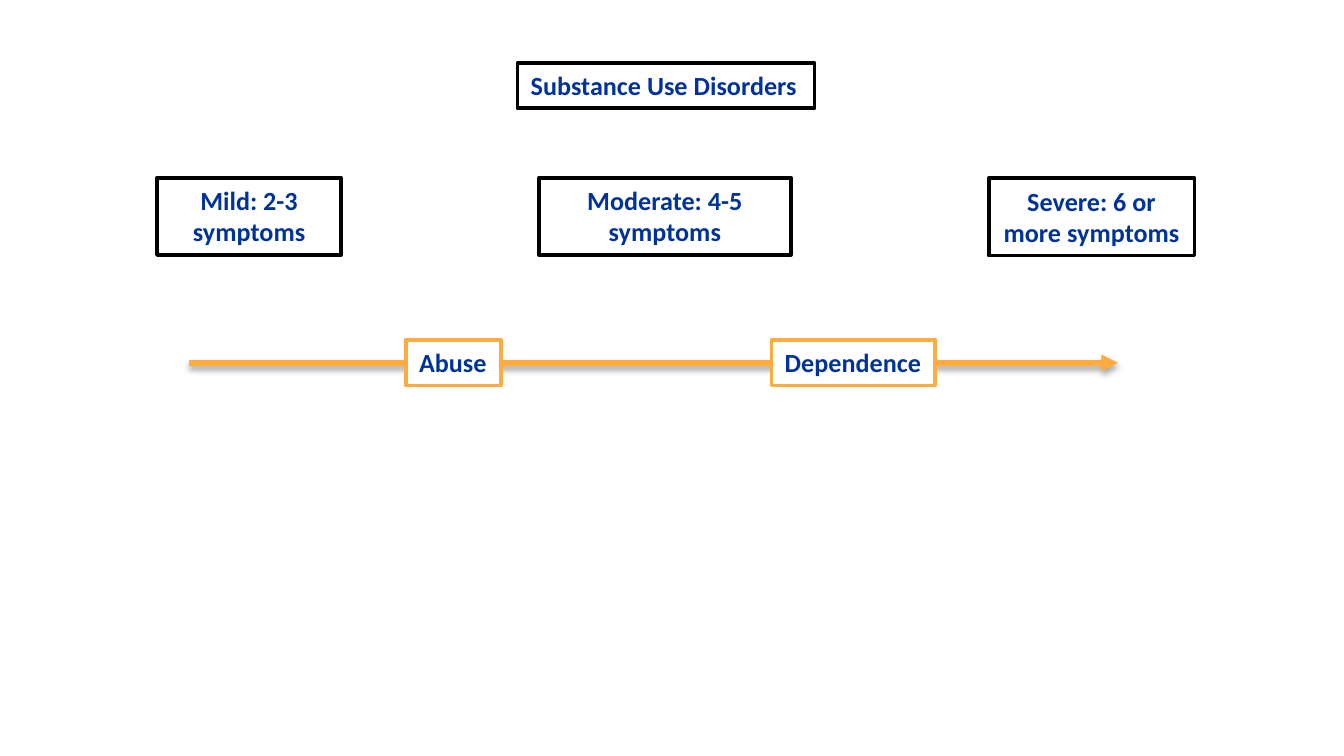
from lxml import etree
from pptx import Presentation
from pptx.dml.color import RGBColor
from pptx.enum.shapes import MSO_CONNECTOR, MSO_SHAPE
from pptx.enum.text import MSO_ANCHOR, PP_ALIGN
from pptx.oxml import parse_xml
from pptx.oxml.ns import nsdecls, qn
from pptx.util import Pt

COLORS = {"text": "003399", "box": "FFFFFF", "border": "000000", "accent": "FFAB40"}
LEFT, CENTER = PP_ALIGN.LEFT, PP_ALIGN.CENTER
LINE_HEIGHT, INSET = 17.1, 3.6

# Content: text, left, top, width, line count, alignment, border colour, wrap
BOXES = [
    ("Mild: 2-3 symptoms", 84.2, 95.2, 98.6, 2, CENTER, "border", True),
    ("Moderate: 4-5 symptoms", 288.7, 95.2, 134.9, 2, CENTER, "border", True),
    ("Severe: 6 or\nmore symptoms", 529.7, 95.5, 110.2, 2, CENTER, "border", False),
    ("Substance Use Disorders", 277.2, 33.8, 159.1, 1, LEFT, "border", False),
    ("Abuse", 217.4, 182.2, 51.1, 1, LEFT, "accent", False),
    ("Dependence", 413.3, 182.2, 87.8, 1, LEFT, "accent", True),
]
ARROW_START, ARROW_END, ARROW_Y = 101.5, 599, 194.4


def color(name):
    return RGBColor.from_string(COLORS[name])


def add_arrow(slide):
    arrow = slide.shapes.add_connector(
        MSO_CONNECTOR.STRAIGHT, Pt(ARROW_START), Pt(ARROW_Y), Pt(ARROW_END), Pt(ARROW_Y))
    arrow.line.color.rgb = color("accent")
    arrow.line.width = Pt(3)
    etree.SubElement(arrow.line._get_or_add_ln(), qn("a:tailEnd"), type="triangle")
    # Soft shadow straight below the line
    arrow._element.spPr.append(parse_xml(
        f'<a:effectLst {nsdecls("a")}>'
        f'<a:outerShdw blurRad="{Pt(3.1)}" dist="{Pt(1.8)}" dir="5400000" rotWithShape="0">'
        '<a:srgbClr val="000000"><a:alpha val="35000"/></a:srgbClr>'
        '</a:outerShdw></a:effectLst>'))


def add_box(slide, text, left, top, width, lines, alignment, border, wrap):
    height = lines * LINE_HEIGHT + 2 * INSET
    shape = slide.shapes.add_shape(
        MSO_SHAPE.RECTANGLE, Pt(left), Pt(top), Pt(width), Pt(height))
    shape.shadow.inherit = False
    shape.fill.solid()
    shape.fill.fore_color.rgb = color("box")
    shape.line.color.rgb = color(border)
    shape.line.width = Pt(2)
    text_frame = shape.text_frame
    text_frame.text = text
    text_frame.word_wrap = wrap
    text_frame.vertical_anchor = MSO_ANCHOR.TOP
    for paragraph in text_frame.paragraphs:
        paragraph.alignment = alignment
        for run in paragraph.runs:
            run.font.name = "Calibri"
            run.font.size = Pt(14)
            run.font.bold = True
            run.font.color.rgb = color("text")


def main():
    presentation = Presentation()
    presentation.slide_width, presentation.slide_height = Pt(720), Pt(405)
    slide = presentation.slides.add_slide(presentation.slide_layouts[6])

    # Severity arrow behind the boxes
    add_arrow(slide)
    for box in BOXES:
        add_box(slide, *box)

    presentation.save("out.pptx")


if __name__ == "__main__":
    main()
